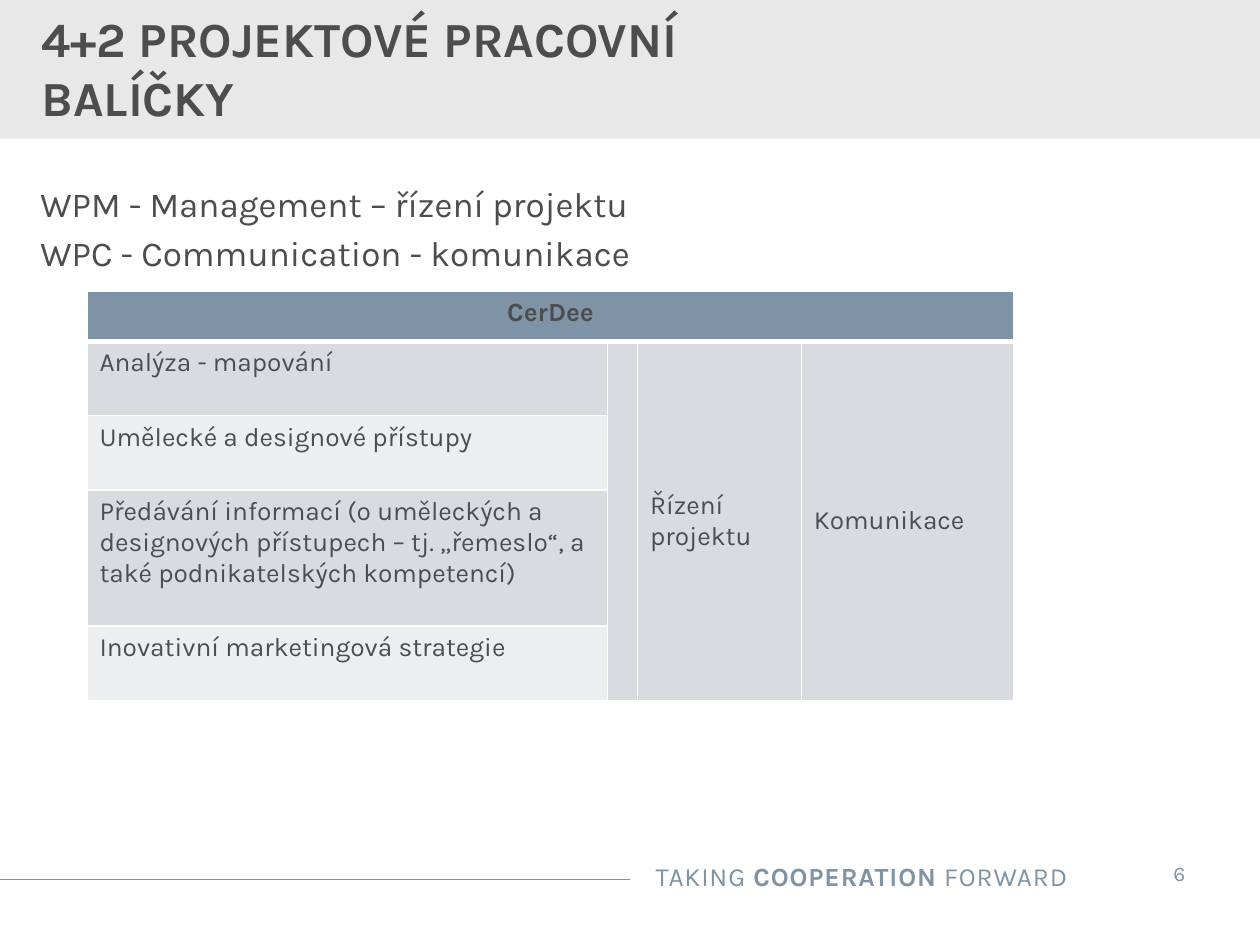
from lxml import etree
from pptx import Presentation
from pptx import util as u
from pptx.dml.color import RGBColor
from pptx.enum import shapes, text
from pptx.oxml.ns import qn

# Content
TITLE = "4+2 PROJEKTOVÉ PRACOVNÍ BALÍČKY"
BODY = ["WPM - Management – řízení projektu",
        "WPC - Communication - komunikace"]
PROJECT = "CerDee"
PACKAGES = [
    "Analýza - mapování",
    "Umělecké a designové přístupy",
    "Předávání informací (o uměleckých a designových přístupech – tj. „řemeslo“, "
    "a také podnikatelských kompetencí)",
    "Inovativní marketingová strategie",
]
SIDE_COLUMNS = ["", "Řízení projektu", "Komunikace"]
SLOGAN = [("TAKING ", False), ("COOPERATION", True), (" FORWARD", False)]
PAGE = "6"

# Style
FONT, DARK, BLUE, GREY, WHITE = "Karla", "4D4D4E", "7E93A5", "E8E8E8", "FFFFFF"
BANDS = ["D8DCE1", "ECEEF0"]
COLS = [4.13, 0.23, 1.3, 1.69]
ROWS = [0.4, 0.59, 0.59, 1.08, 0.59]


def rgb(value):
    return RGBColor.from_string(value)


def place(sp, left, top, width, height):
    sp.left, sp.top = u.Inches(left), u.Inches(top)
    sp.width, sp.height = u.Inches(width), u.Inches(height)


def style(p, size, color, bold=False):
    for r in p.runs:
        r.font.name, r.font.size, r.font.bold = FONT, u.Pt(size), bold
        r.font.color.rgb = rgb(color)


def set_insets(tf, side, top):
    tf.margin_left = tf.margin_right = u.Inches(side)
    tf.margin_top = tf.margin_bottom = u.Inches(top)


def set_borders(cell, widths):
    """Draw white borders; widths are points for left, right, top, bottom."""
    tcPr = cell._tc.get_or_add_tcPr()
    for i, (side, width) in enumerate(zip("LRTB", widths)):
        ln = etree.Element(qn(f"a:ln{side}"), w=str(u.Pt(width)))
        fill = etree.SubElement(ln, qn("a:solidFill"))
        etree.SubElement(fill, qn("a:srgbClr"), val=WHITE)
        tcPr.insert(i, ln)


def fill_cell(cell, words, size=15, bold=False):
    cell.text_frame.text = words
    style(cell.text_frame.paragraphs[0], size, DARK, bold)


prs = Presentation()
prs.slide_width, prs.slide_height = u.Inches(10), u.Inches(7.5)
s = prs.slides.add_slide(prs.slide_layouts[1])

# Header band, behind the title
band = s.shapes.add_shape(shapes.MSO_SHAPE.RECTANGLE, 0, 0, prs.slide_width, u.Inches(1.1))
band.shadow.inherit = False
band.fill.solid()
band.fill.fore_color.rgb = rgb(GREY)
band.line.fill.background()
s.shapes._spTree.insert(2, band._element)

# Title
title = s.shapes.title
place(title, 0, 0.16, 7.23, 0.75)
tf = title.text_frame
tf.text = TITLE
set_insets(tf, 0.33, 0.05)
tf.auto_size = text.MSO_AUTO_SIZE.NONE
tf.vertical_anchor = text.MSO_ANCHOR.MIDDLE
tf.paragraphs[0].alignment = text.PP_ALIGN.LEFT
style(tf.paragraphs[0], 28, DARK, True)

# Body lines
body = s.placeholders[1]
place(body, 0.32, 1.45, 9.36, 4.56)
tf = body.text_frame
tf.text = "\n".join(BODY)
set_insets(tf, 0, 0)
tf.auto_size = text.MSO_AUTO_SIZE.NONE
for i, p in enumerate(tf.paragraphs):
    pPr = p._p.get_or_add_pPr()
    pPr.set("marL", "0")
    pPr.set("indent", "0")
    etree.SubElement(pPr, qn("a:buNone"))
    p.space_before = u.Pt(4 if i else 0)
    style(p, 20, DARK)

# Work package table
frame = s.shapes.add_table(len(ROWS), len(COLS), u.Inches(0.69), u.Inches(2.31),
                           u.Inches(sum(COLS)), u.Inches(sum(ROWS)))
table = frame.table
for col, width in zip(table.columns, COLS):
    col.width = u.Inches(width)
for row, height in zip(table.rows, ROWS):
    row.height = u.Inches(height)
for r in range(len(ROWS)):
    for c in range(len(COLS)):
        cell = table.cell(r, c)
        set_borders(cell, (1, 1, 3 if r == 1 else 1, 3 if r == 0 else 1))
        cell.fill.solid()
        color = BLUE if r == 0 else BANDS[(r - 1) % 2] if c == 0 else BANDS[0]
        cell.fill.fore_color.rgb = rgb(color)

header = table.cell(0, 0)
header.merge(table.cell(0, len(COLS) - 1))
fill_cell(header, PROJECT, bold=True)
header.text_frame.paragraphs[0].alignment = text.PP_ALIGN.CENTER
for r, words in enumerate(PACKAGES, 1):
    fill_cell(table.cell(r, 0), words)
for c, words in enumerate(SIDE_COLUMNS, 1):
    cell = table.cell(1, c)
    cell.merge(table.cell(len(ROWS) - 1, c))
    cell.vertical_anchor = text.MSO_ANCHOR.MIDDLE
    fill_cell(cell, words)

# Footer rule
rule = s.shapes.add_connector(shapes.MSO_CONNECTOR.STRAIGHT, 0, u.Inches(6.98),
                              u.Inches(5), u.Inches(6.98))
rule.line.color.rgb = rgb(BLUE)
rule.line.width = u.Pt(0.75)
etree.SubElement(rule._element.spPr, qn("a:effectLst"))

# Footer slogan
slogan = s.shapes.add_textbox(u.Inches(3.88), u.Inches(6.78), u.Inches(4.69), u.Inches(0.35))
slogan.text_frame.word_wrap = True
p = slogan.text_frame.paragraphs[0]
p.alignment = text.PP_ALIGN.RIGHT
for words, _ in SLOGAN:
    p.add_run().text = words
style(p, 15, BLUE)
for r, (_, bold) in zip(p.runs, SLOGAN):
    r.font.bold = bold
    r.font._element.set("spc", "50")

# Page number
page = s.shapes.add_textbox(u.Inches(8.99), u.Inches(6.73), u.Inches(0.74), u.Inches(0.4))
tf = page.text_frame
tf.text = PAGE
set_insets(tf, 0.2, 0.1)
tf.paragraphs[0].alignment = text.PP_ALIGN.CENTER
style(tf.paragraphs[0], 12, BLUE)

prs.save("out.pptx")
